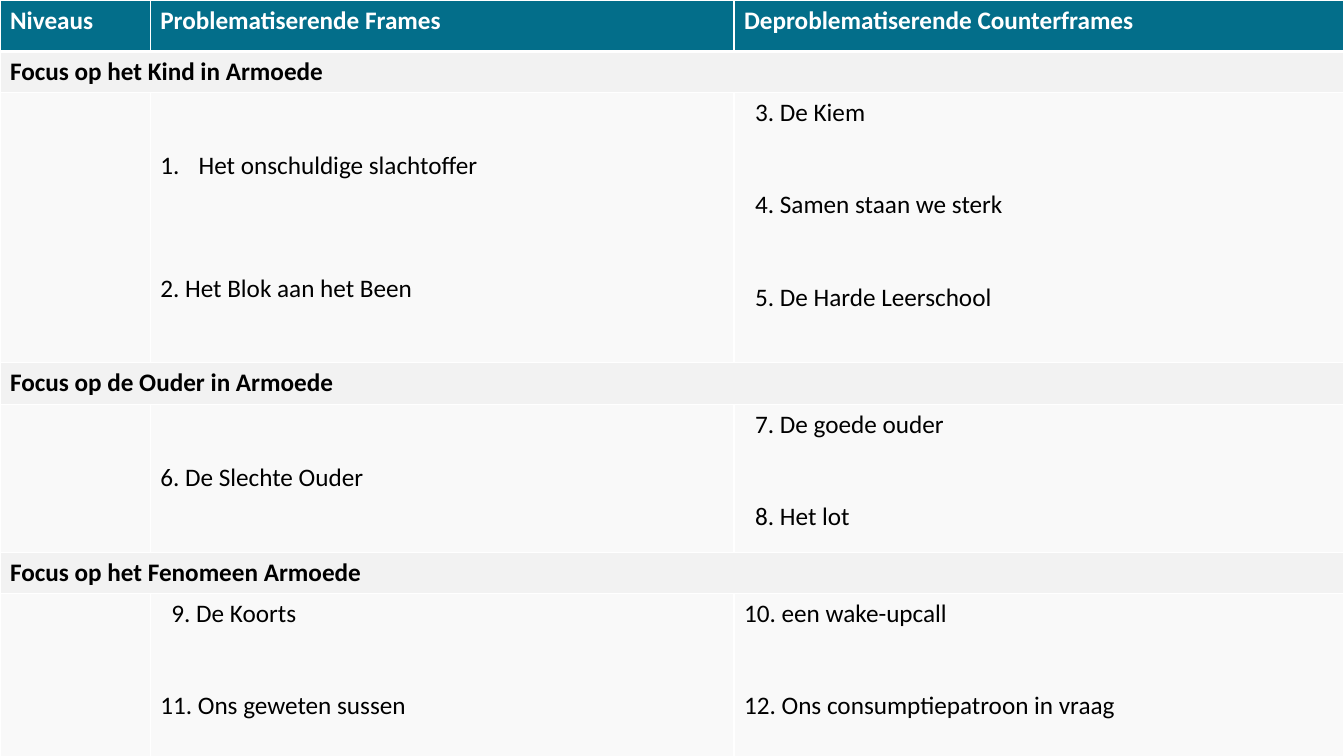
from lxml import etree
from pptx import Presentation
from pptx.dml.color import RGBColor
from pptx.enum.text import MSO_ANCHOR
from pptx.oxml.ns import qn
from pptx.util import Inches, Pt

MIDDLE, TOP = MSO_ANCHOR.MIDDLE, MSO_ANCHOR.TOP
COLORS = {"header": "036E8A", "section": "F2F2F2", "body": "F9F9F9",
          "white": "FFFFFF", "black": "000000"}
FONT, FONT_SIZE = "Calibri", 18
LINE_HEIGHT = 21.97  # points, one line of text at FONT_SIZE
INDENT = 0.11        # inches, the small indent of some frames
HANGING = 0.38       # inches, room for the automatic number

COLUMN_WIDTHS = [1.49, 5.79, 6.05]
ROW_HEIGHTS = [0.51, 0.41, 2.68, 0.41, 1.47, 0.41, 1.69]
HEADERS = ["Niveaus", "Problematiserende Frames", "Deproblematiserende Counterframes"]

# Each section: title, frames, counterframes; each entry: text and its format
SECTIONS = [
    ("Focus op het Kind in Armoede",
     [("Het onschuldige slachtoffer", {"numbered": True}),
      ("2. Het Blok aan het Been", {"lines_before": 3})],
     [("3. De Kiem", {"left": INDENT}),
      ("4. Samen staan we sterk", {"left": INDENT, "lines_before": 2}),
      ("5. De Harde Leerschool", {"left": INDENT, "lines_before": 2})]),
    ("Focus op de Ouder in Armoede",
     [("6. De Slechte Ouder", {})],
     [("7. De goede ouder", {"left": INDENT}),
      ("8. Het lot", {"left": INDENT, "lines_before": 2})]),
    ("Focus op het Fenomeen Armoede",
     [("9. De Koorts", {"left": INDENT}),
      ("11. Ons geweten sussen", {"lines_before": 2})],
     [("10. een wake-upcall", {}),
      ("12. Ons consumptiepatroon in vraag", {"lines_before": 2})]),
]


def write_text(paragraph, text, color="black", bold=False, left=0,
               lines_before=0, numbered=False):
    properties = paragraph._p.get_or_add_pPr()
    if numbered:
        properties.set("marL", str(Inches(HANGING)))
        properties.set("indent", str(-Inches(HANGING)))
        etree.SubElement(properties, qn("a:buFont"), typeface="+mj-lt")
        etree.SubElement(properties, qn("a:buAutoNum"), type="arabicPeriod")
    elif left:
        properties.set("marL", str(Inches(left)))
    if lines_before:
        paragraph.space_before = Pt(round(lines_before * LINE_HEIGHT, 1))
    run = paragraph.add_run()
    run.text = text
    run.font.name = FONT
    run.font.size = Pt(FONT_SIZE)
    run.font.bold = bold
    run.font.color.rgb = RGBColor.from_string(COLORS[color])


def style_cell(cell, fill, top=1, bottom=1, anchor=TOP):
    properties = cell._tc.get_or_add_tcPr()
    for side, width in (("L", 1), ("R", 1), ("T", top), ("B", bottom)):
        line = etree.SubElement(properties, qn(f"a:ln{side}"), w=str(Pt(width)))
        solid = etree.SubElement(line, qn("a:solidFill"))
        etree.SubElement(solid, qn("a:srgbClr"), val=COLORS["white"])
    cell.fill.solid()
    cell.fill.fore_color.rgb = RGBColor.from_string(COLORS[fill])
    cell.vertical_anchor = anchor


def fill_cell(cell, entries):
    frame = cell.text_frame
    for index, (text, text_format) in enumerate(entries):
        paragraph = frame.add_paragraph() if index else frame.paragraphs[0]
        write_text(paragraph, text, **text_format)


def add_frames_table(slide):
    shape = slide.shapes.add_table(len(ROW_HEIGHTS), len(COLUMN_WIDTHS), 0, 0,
                                   Inches(sum(COLUMN_WIDTHS)), Inches(sum(ROW_HEIGHTS)))
    table = shape.table
    table.first_row = table.horz_banding = False
    for column, width in zip(table.columns, COLUMN_WIDTHS):
        column.width = Inches(width)
    for row, height in zip(table.rows, ROW_HEIGHTS):
        row.height = Inches(height)
    return table


def add_header(table):
    for column, title in enumerate(HEADERS):
        cell = table.cell(0, column)
        style_cell(cell, "header", bottom=3)
        write_text(cell.text_frame.paragraphs[0], title, color="white", bold=True)


def add_section(table, row, title, frames, counterframes):
    # Title row across all columns
    for column in range(len(COLUMN_WIDTHS)):
        style_cell(table.cell(row, column), "section", top=3 if row == 1 else 1)
    title_cell = table.cell(row, 0)
    title_cell.merge(table.cell(row, len(COLUMN_WIDTHS) - 1))
    write_text(title_cell.text_frame.paragraphs[0], title, bold=True)

    # Frames beside their counterframes
    last = row + 1 == len(ROW_HEIGHTS) - 1
    for column, entries in enumerate([[], frames, counterframes]):
        cell = table.cell(row + 1, column)
        style_cell(cell, "body", anchor=MIDDLE if column == 1 and not last else TOP)
        fill_cell(cell, entries)


def main():
    presentation = Presentation()
    presentation.slide_width = Inches(13.33)
    presentation.slide_height = Inches(7.5)
    slide = presentation.slides.add_slide(presentation.slide_layouts[6])

    table = add_frames_table(slide)
    add_header(table)
    for index, section in enumerate(SECTIONS):
        add_section(table, 1 + 2 * index, *section)

    presentation.save("out.pptx")


if __name__ == "__main__":
    main()
